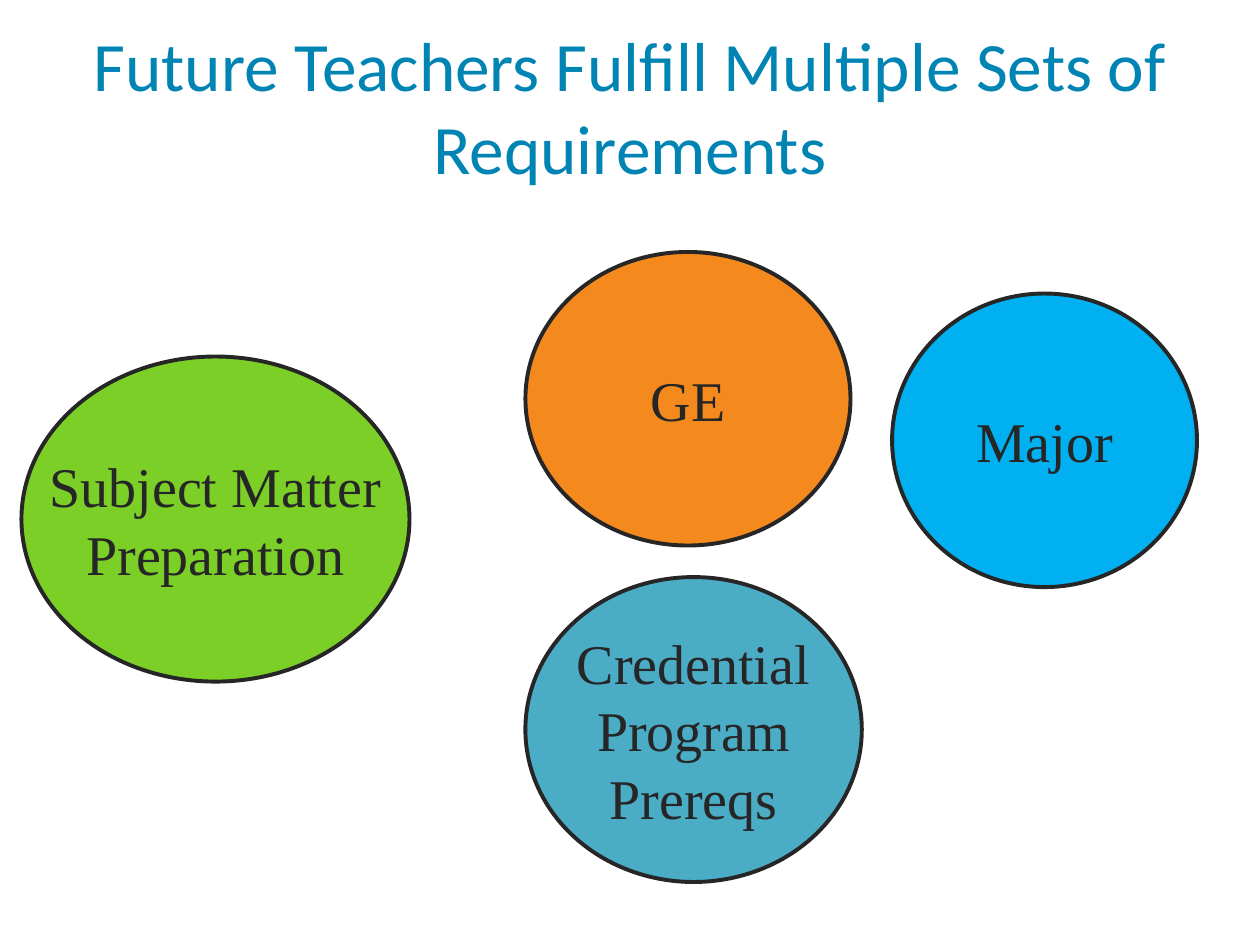
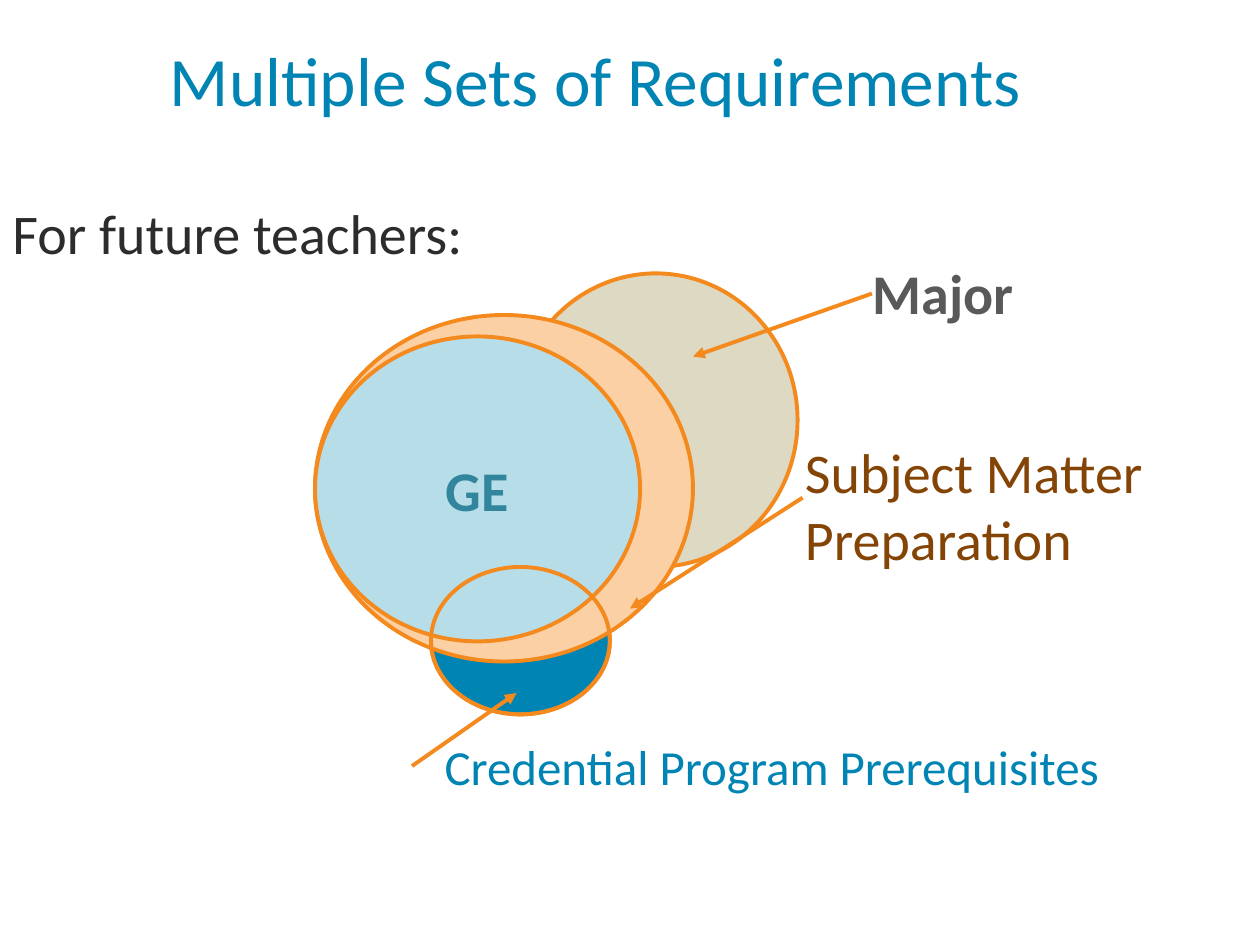
import lxml.etree
import pptx
import pptx.dml.color
import pptx.enum.shapes
import pptx.enum.text
import pptx.oxml.ns
import pptx.util

Inches = pptx.util.Inches
Pt = pptx.util.Pt
Align = pptx.enum.text.PP_ALIGN
Anchor = pptx.enum.text.MSO_ANCHOR
AutoSize = pptx.enum.text.MSO_AUTO_SIZE

COLORS = {
    "blue": "0084B4",
    "orange": "F4891E",
    "ink": "262626",
    "lead": "2C2C2C",
    "sky": "00B0F0",
    "green": "7BCF27",
    "teal": "4BACC6",
    "sand": "DDD9C3",
    "peach": "FBD0A5",
    "ice": "B7DEE8",
    "deep teal": "31859C",
    "gray": "595959",
    "brown": "834406",
}
SANS = "Calibri"
SERIF = "Times New Roman"
LINE_WIDTH = 2.25


def rgb(color):
    return pptx.dml.color.RGBColor.from_string(COLORS[color])


def write_lines(frame, lines, size, color, font=SANS, bold=False,
                align=Align.LEFT, anchor=Anchor.TOP, wrap=False):
    """Write each line as a paragraph of one run."""
    frame.word_wrap = wrap
    frame.vertical_anchor = anchor
    for index, line in enumerate(lines):
        paragraph = frame.add_paragraph() if index else frame.paragraphs[0]
        paragraph.alignment = align
        run = paragraph.add_run()
        run.text = line
        run.font.name = font
        run.font.size = Pt(size)
        run.font.bold = bold
        run.font.color.rgb = rgb(color)


def add_text(shapes, box, lines, size, color, grow=True, **style):
    label = shapes.add_textbox(*map(Inches, box))
    write_lines(label.text_frame, lines, size, color, **style)
    label.text_frame.auto_size = AutoSize.SHAPE_TO_FIT_TEXT if grow else AutoSize.NONE


def add_title(slide, box, title, align):
    add_text(slide.shapes, box, [title], 39.6, "blue", grow=False,
             align=align, anchor=Anchor.MIDDLE, wrap=True)


def add_ellipse(slide, box, fill, outline, lines=(), **style):
    ellipse = slide.shapes.add_shape(
        pptx.enum.shapes.MSO_SHAPE.OVAL, *map(Inches, box))
    ellipse.shadow.inherit = False
    if fill:
        ellipse.fill.solid()
        ellipse.fill.fore_color.rgb = rgb(fill)
    else:
        ellipse.fill.background()
    ellipse.line.color.rgb = rgb(outline)
    ellipse.line.width = Pt(LINE_WIDTH)
    if lines:
        write_lines(ellipse.text_frame, lines, 32, align=Align.CENTER,
                    anchor=Anchor.MIDDLE, **style)


def add_arrow(shapes, start, end):
    arrow = shapes.add_connector(
        pptx.enum.shapes.MSO_CONNECTOR.STRAIGHT, *map(Inches, start + end))
    arrow.line.color.rgb = rgb("orange")
    arrow.line.width = Pt(LINE_WIDTH)
    qn = pptx.oxml.ns.qn
    lxml.etree.SubElement(arrow.line._get_or_add_ln(), qn("a:tailEnd"), type="triangle")
    lxml.etree.SubElement(arrow._element.spPr, qn("a:effectLst"))


def add_requirement_circles(slide, box):
    """Separate circles, placed from the top left corner of the box."""
    left, top = box
    circles = [
        (4.0, 0, 2.58, 2.33, "orange", ["GE"]),
        (6.91, 0.33, 2.42, 2.33, "sky", ["Major"]),
        (0, 0.83, 3.08, 2.58, "green", ["Subject Matter", "Preparation"]),
        (4.0, 2.58, 2.67, 2.42, "teal", ["Credential", "Program", "Prereqs"]),
    ]
    for dx, dy, width, height, fill, lines in circles:
        add_ellipse(slide, (left + dx, top + dy, width, height), fill, "ink",
                    lines, color="ink", font=SERIF)


def add_overlap_diagram(slide, box):
    """Overlapping sets, placed from the top left corner of the box."""
    left, top = box
    prerequisites = (left + 0.92, top + 2.33, 1.42, 1.17)
    major = (left + 1.58, top, 2.25, 2.33)
    subject_matter = (left, top + 0.33, 3, 2.75)
    general_education = (left, top + 0.5, 2.58, 2.42)
    add_ellipse(slide, prerequisites, "blue", "orange")
    add_ellipse(slide, major, "sand", "orange")
    add_ellipse(slide, subject_matter, "peach", "orange")
    add_ellipse(slide, general_education, "ice", "orange", ["GE"],
                color="deep teal", bold=True)
    add_ellipse(slide, prerequisites, None, "orange")


def add_callout(slide, box, lines, size, color, tail, tip, bold=False):
    """Label with an arrow; tail and tip are offsets from the box corner."""
    left, top = box[:2]
    callout = slide.shapes.add_group_shape().shapes
    add_text(callout, box, lines, size, color, bold=bold)
    add_arrow(callout, (left + tail[0], top + tail[1]), (left + tip[0], top + tip[1]))


def build_separate_sets(slide):
    add_requirement_circles(slide, (0.17, 2))
    add_title(slide, (0, 0.25, 10, 1.17),
              "Future Teachers Fulfill Multiple Sets of Requirements", Align.CENTER)


def build_overlapping_sets(slide):
    add_title(slide, (1.25, 0, 7.67, 1.25), "Multiple Sets of Requirements", Align.LEFT)
    add_text(slide.shapes, (0, 1.53, 4.1, 0.64), ["For future teachers:"],
             32, "lead", wrap=True)
    add_overlap_diagram(slide, (2.5, 2.17))
    add_callout(slide, (6.83, 2, 1.33, 0.64), ["Major"], 32, "gray",
                tail=(0.09, 0.33), tip=(-1.33, 0.83), bold=True)
    add_callout(slide, (6.29, 3.42, 3.02, 1.18), ["Subject Matter", "Preparation"],
                32, "brown", tail=(0.08, 0.53), tip=(-1.29, 1.41))
    add_callout(slide, (3.43, 5.8, 5.45, 0.57), ["Credential Program Prerequisites"],
                28, "blue", tail=(-0.16, 0.28), tip=(0.67, -0.3))


def main():
    deck = pptx.Presentation()
    deck.slide_width, deck.slide_height = Inches(10), Inches(7.5)
    blank = deck.slide_layouts[6]
    for build in (build_separate_sets, build_overlapping_sets):
        build(deck.slides.add_slide(blank))
    deck.save("out.pptx")


if __name__ == "__main__":
    main()
